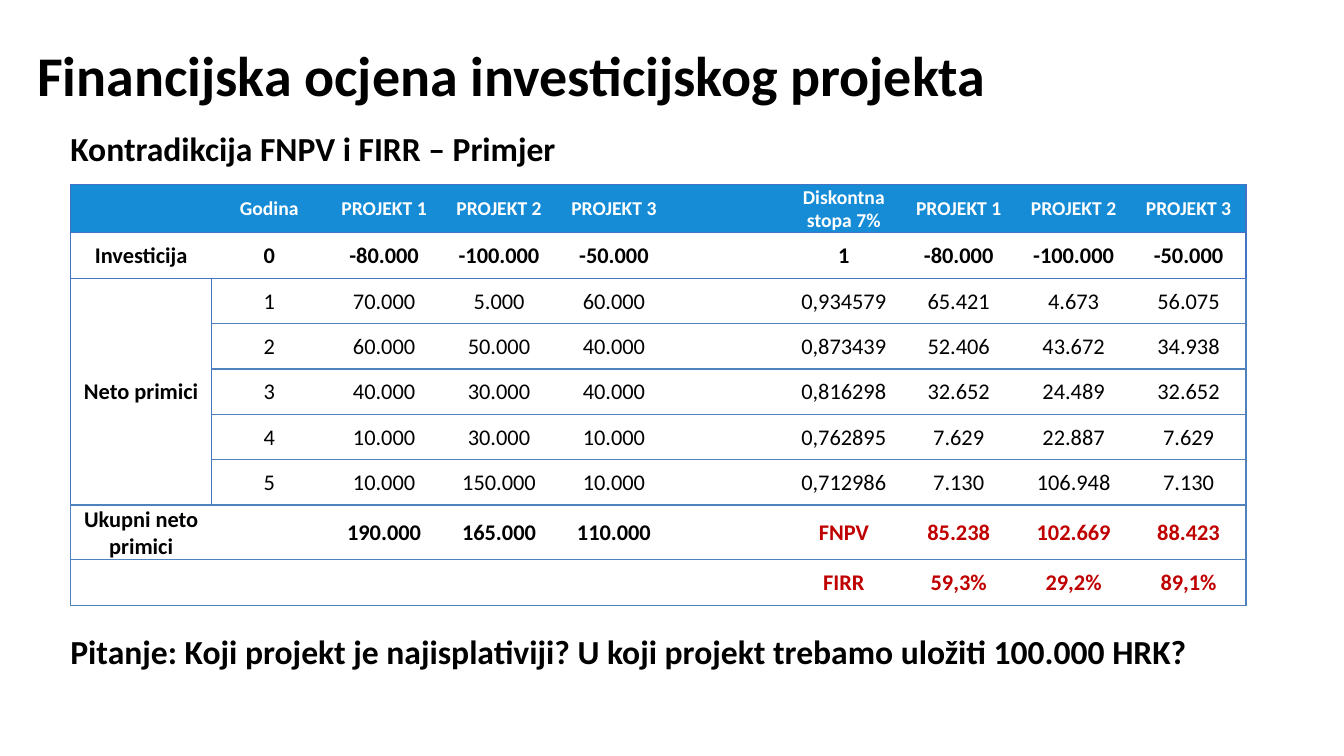
from lxml import etree
from pptx import Presentation
from pptx import util as u
from pptx.dml.color import RGBColor
from pptx.enum import text
from pptx.oxml.ns import qn

COLORS = {"ink": "000000", "white": "FFFFFF", "header": "168CD7", "result": "C00000",
          "frame": "4472C4", "rule": "4F81BD"}

TITLE = "Financijska ocjena investicijskog projekta"
SUBTITLE = "Kontradikcija FNPV i FIRR – Primjer"
QUESTION = "Pitanje: Koji projekt je najisplativiji? U koji projekt trebamo uložiti 100.000 HRK?"

PROJECTS = ["PROJEKT 1", "PROJEKT 2", "PROJEKT 3"]
INVESTMENTS = ["-80.000", "-100.000", "-50.000"]
CASH_FLOWS = [
    ["", "Godina", *PROJECTS, "", "Diskontna stopa 7%", *PROJECTS],
    ["Investicija", "0", *INVESTMENTS, "", "1", *INVESTMENTS],
    ["Neto primici", "1", "70.000", "5.000", "60.000", "", "0,934579", "65.421", "4.673", "56.075"],
    ["", "2", "60.000", "50.000", "40.000", "", "0,873439", "52.406", "43.672", "34.938"],
    ["", "3", "40.000", "30.000", "40.000", "", "0,816298", "32.652", "24.489", "32.652"],
    ["", "4", "10.000", "30.000", "10.000", "", "0,762895", "7.629", "22.887", "7.629"],
    ["", "5", "10.000", "150.000", "10.000", "", "0,712986", "7.130", "106.948", "7.130"],
    ["Ukupni neto primici", "", "190.000", "165.000", "110.000", "FNPV", "", "85.238", "102.669", "88.423"],
    ["", "", "", "", "", "", "FIRR", "59,3%", "29,2%", "89,1%"],
]
COLUMN_WIDTHS = [1.4] + [1.14] * 9
ROW_HEIGHTS = [0.48] + [0.45] * 6 + [0.51, 0.45]
RECEIPTS = range(2, 7)
TOTALS_ROW = 7
SPACER = 5


def write(frame, words, size=24, color="ink", bold=True, align=text.PP_ALIGN.LEFT, spacing=0.9):
    """Put one formatted paragraph into a text frame."""
    paragraph = frame.paragraphs[0]
    paragraph.alignment = align
    paragraph.line_spacing = spacing
    run = paragraph.add_run()
    run.text = words
    run.font.name = "Calibri"
    run.font.size = u.Pt(size)
    run.font.bold = bold
    run.font.color.rgb = RGBColor.from_string(COLORS[color])


def add_line_of_text(slide, box, words, anchor=text.MSO_ANCHOR.TOP, **style):
    """Place a wrapping text box in the given box."""
    frame = slide.shapes.add_textbox(*map(u.Inches, box)).text_frame
    frame.word_wrap = True
    frame.vertical_anchor = anchor
    write(frame, words, **style)


def set_borders(cell, edges):
    """Draw the coloured edges of a cell and clear the others."""
    properties = cell._tc.get_or_add_tcPr()
    for position, side in enumerate("LRTB"):
        line = etree.Element(qn(f"a:ln{side}"), w=str(u.Pt(1)))
        if side in edges:
            fill = etree.SubElement(line, qn("a:solidFill"))
            etree.SubElement(fill, qn("a:srgbClr"), val=COLORS[edges[side]])
        else:
            etree.SubElement(line, qn("a:noFill"))
        properties.insert(position, line)


def border_edges(row, column):
    """Return the edge colours that belong to a table position."""
    edges = {"T": "frame" if row < 3 else "rule", "B": "frame" if row < 2 else "rule"}
    if column == 0:
        edges["L"] = "frame" if row < TOTALS_ROW else "rule"
        if row in RECEIPTS:
            edges.update(R="frame", T="frame", B="frame")
    if column == 1 and row in RECEIPTS:
        edges["L"] = "frame"
    if column == len(COLUMN_WIDTHS) - 1:
        edges["R"] = "frame" if row < 2 else "rule"
    return edges


def fill_cell(cell, words, row, column):
    """Format one cash flow cell according to its row and column."""
    cell.fill.solid()
    cell.fill.fore_color.rgb = RGBColor.from_string(COLORS["white" if row else "header"])
    cell.vertical_anchor = text.MSO_ANCHOR.MIDDLE
    cell.margin_left = cell.margin_right = cell.margin_top = u.Inches(0.01)
    cell.margin_bottom = 0
    set_borders(cell, border_edges(row, column))
    if words:
        color = "white" if row == 0 else "result" if row >= TOTALS_ROW and column >= SPACER else "ink"
        write(cell.text_frame, words, size=16 if row else 14, color=color,
              bold=row not in RECEIPTS or column == 0, align=text.PP_ALIGN.CENTER, spacing=1.0)


def add_cash_flows(slide, box):
    """Place the project comparison table in the given box."""
    table = slide.shapes.add_table(len(ROW_HEIGHTS), len(COLUMN_WIDTHS), *map(u.Inches, box)).table
    table.first_row = table.horz_banding = False
    for column, width in zip(table.columns, COLUMN_WIDTHS):
        column.width = u.Inches(width)
    for row, height in zip(table.rows, ROW_HEIGHTS):
        row.height = u.Inches(height)
    for r, values in enumerate(CASH_FLOWS):
        for c, words in enumerate(values):
            fill_cell(table.cell(r, c), words, r, c)
    table.cell(RECEIPTS[0], 0).merge(table.cell(RECEIPTS[-1], 0))
    net_value = table.cell(TOTALS_ROW, SPACER)
    net_value.merge(table.cell(TOTALS_ROW, SPACER + 1))
    net_value.margin_left = u.Inches(COLUMN_WIDTHS[SPACER] + 0.01)


def build_project_slide(deck):
    """Add the project evaluation slide to the deck."""
    slide = deck.slides.add_slide(deck.slide_layouts[6])
    add_line_of_text(slide, (0.27, 0.05, 12.4, 1.45), TITLE, anchor=text.MSO_ANCHOR.MIDDLE, size=40)
    add_line_of_text(slide, (0.6, 1.27, 12.73, 0.46), SUBTITLE)
    add_cash_flows(slide, (0.7, 1.83, sum(COLUMN_WIDTHS), sum(ROW_HEIGHTS)))
    add_line_of_text(slide, (0.6, 6.26, 12.73, 0.46), QUESTION)


def main():
    """Build and save the deck."""
    deck = Presentation()
    deck.slide_width, deck.slide_height = u.Inches(13.33), u.Inches(7.5)
    build_project_slide(deck)
    deck.save("out.pptx")


if __name__ == "__main__":
    main()
